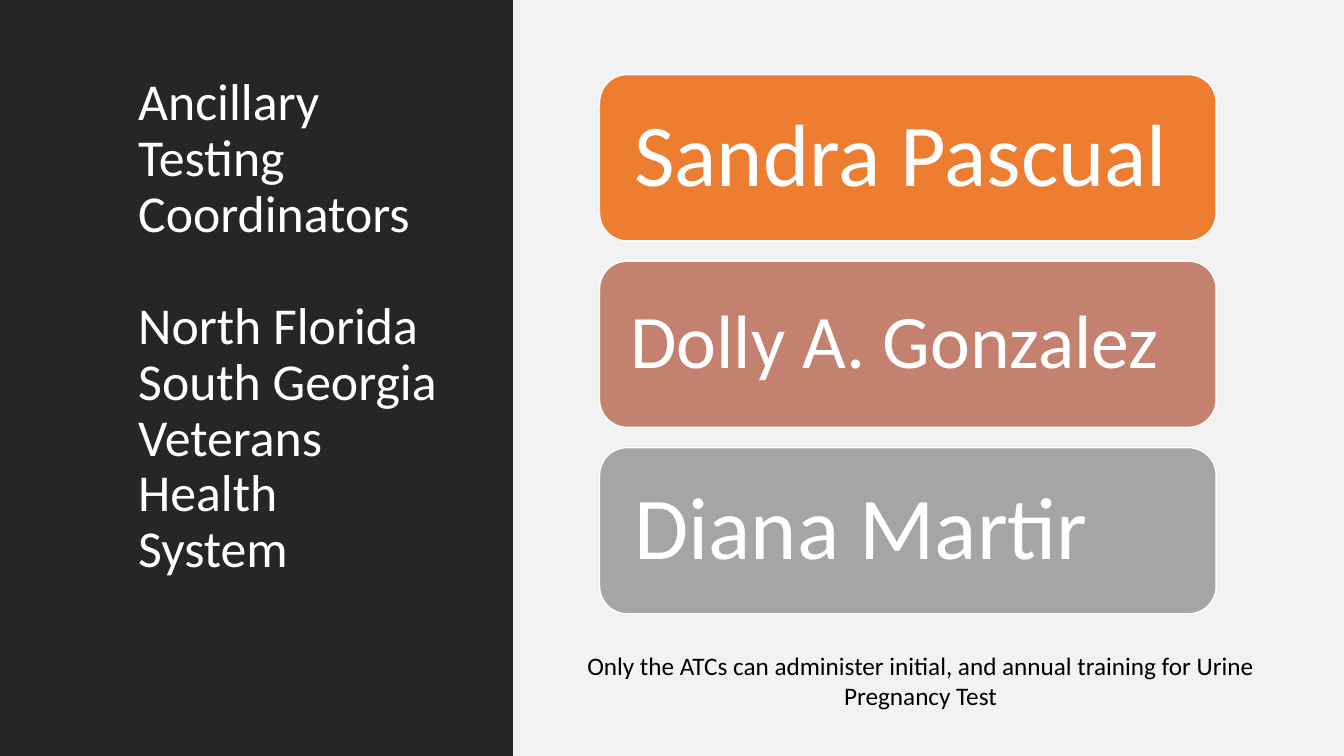
import pptx
import pptx.util
import pptx.dml.color
import pptx.enum.shapes
import pptx.enum.text
from dataclasses import dataclass

Cm = pptx.util.Cm
Pt = pptx.util.Pt
Kind = pptx.enum.shapes.MSO_SHAPE
Align = pptx.enum.text.PP_ALIGN
Anchor = pptx.enum.text.MSO_ANCHOR
Fit = pptx.enum.text.MSO_AUTO_SIZE


@dataclass
class Theme:
    font: str = "Calibri"
    dark: str = "262626"
    pale: str = "F2F2F2"
    white: str = "FFFFFF"
    black: str = "000000"
    orange: str = "ED7D31"
    rose: str = "C48170"
    gray: str = "A5A5A5"
    title: int = 37
    large: int = 63
    medium: int = 54
    note: int = 18


def color(code):
    return pptx.dml.color.RGBColor.from_string(code)


class Page:
    def __init__(self, deck, theme):
        self.theme = theme
        self.slide = deck.slides.add_slide(deck.slide_layouts[5])

    def label(self, frame, text, size, ink, align=Align.LEFT, lines=0.9):
        frame.word_wrap = True
        frame.auto_size = Fit.NONE
        frame.text = text
        for para in frame.paragraphs:
            para.alignment = align
            para.line_spacing = lines
            for run in para.runs:
                run.font.name = self.theme.font
                run.font.size = Pt(size)
                run.font.color.rgb = color(ink)

    def block(self, kind, box, fill):
        shape = self.slide.shapes.add_shape(kind, *map(Cm, box))
        shape.shadow.inherit = False
        shape.fill.solid()
        shape.fill.fore_color.rgb = color(fill)
        shape.line.fill.background()
        return shape

    def panel(self, box, fill):
        self.block(Kind.RECTANGLE, box, fill)

    def title(self, box, text, gap):
        shape = self.slide.shapes.title
        shape._element.getparent().append(shape._element)
        shape.left, shape.top, shape.width, shape.height = map(Cm, box)
        frame = shape.text_frame
        frame.vertical_anchor = Anchor.TOP
        self.label(frame, text, self.theme.title, self.theme.white)
        for para in frame.paragraphs:
            para.space_before = Pt(0)
        for para in frame.paragraphs[1:]:
            para.space_before = Pt(gap)

    def card(self, box, text, fill, size, inset):
        shape = self.block(Kind.ROUNDED_RECTANGLE, box, fill)
        shape.line.color.rgb = color(self.theme.white)
        shape.line.width = Pt(1)
        frame = shape.text_frame
        frame.vertical_anchor = Anchor.MIDDLE
        frame.margin_left = frame.margin_right = Cm(inset)
        frame.margin_top = frame.margin_bottom = Cm(inset)
        self.label(frame, text, size, self.theme.white)

    def note(self, box, text):
        shape = self.slide.shapes.add_textbox(*map(Cm, box))
        self.label(shape.text_frame, text, self.theme.note,
                   self.theme.black, Align.CENTER, 1.0)


def main():
    theme = Theme()
    wide, high, split = 33.87, 19.05, 12.93
    deck = pptx.Presentation()
    deck.slide_width, deck.slide_height = Cm(wide), Cm(high)
    page = Page(deck, theme)

    page.panel((0, 0, split, high), theme.dark)
    page.title((3.23, 1.78, 8.05, 15.49),
               "Ancillary Testing Coordinators\n"
               "North Florida South Georgia Veterans Health System", 40)
    page.panel((split, 0, wide - split, high), theme.pale)

    people = [
        ("Sandra Pascual", theme.orange, theme.large, 0.67),
        ("Dolly A. Gonzalez", theme.rose, theme.medium, 0.57),
        ("Diana Martir", theme.gray, theme.large, 0.67),
    ]
    for row, person in enumerate(people):
        page.card((15.11, 1.88 + row * 4.7, 15.54, 4.19), *person)

    page.note((13.41, 16.26, 19.58, 1.8),
              "Only the ATCs can administer initial, and annual training "
              "for Urine Pregnancy Test")
    deck.save("out.pptx")


if __name__ == "__main__":
    main()
